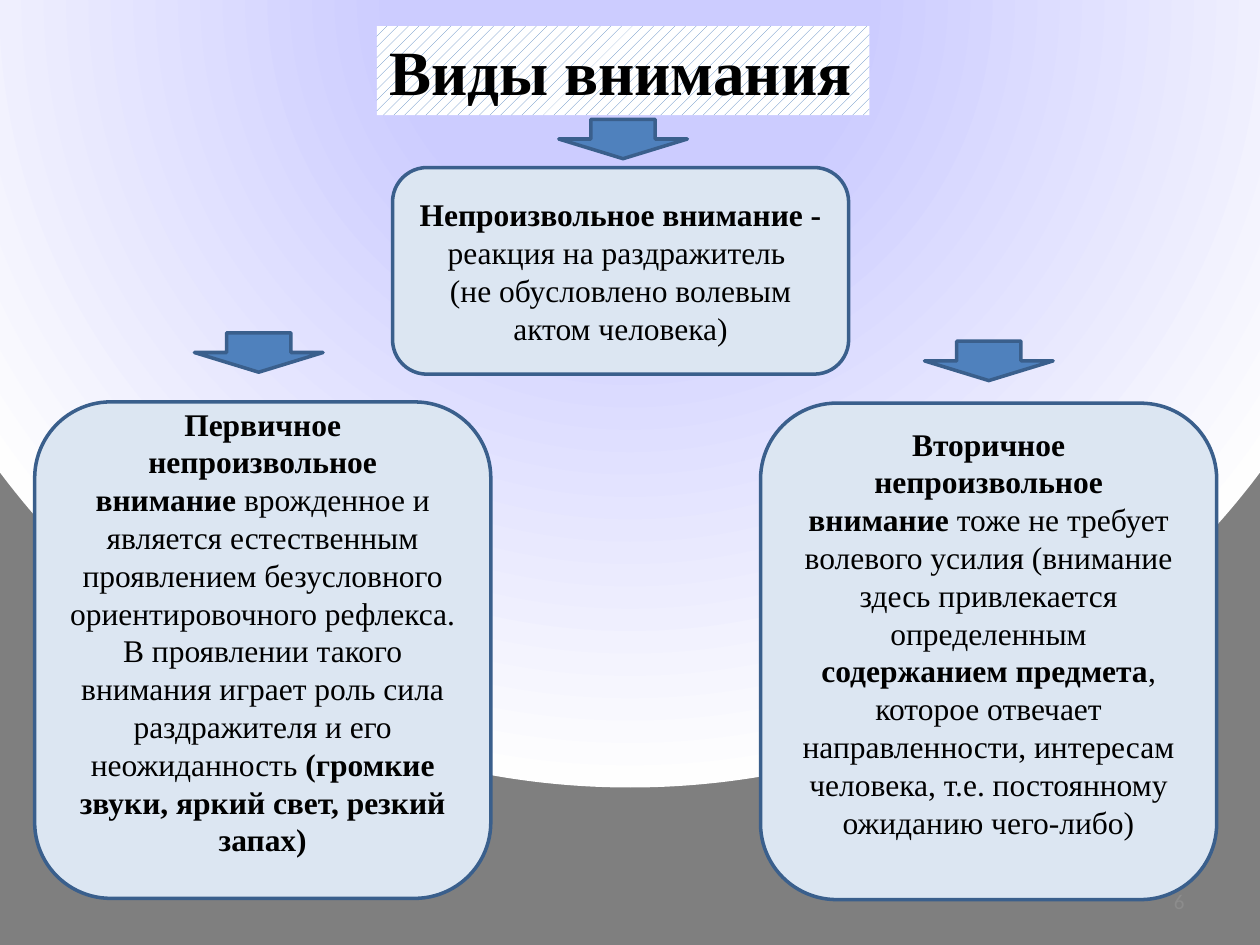
import lxml.etree
import pptx
import pptx.dml.color
import pptx.enum.dml
import pptx.enum.shapes
import pptx.enum.text
import pptx.util

Pt = pptx.util.Pt
RGBColor = pptx.dml.color.RGBColor
SHAPE = pptx.enum.shapes.MSO_SHAPE
ALIGN = pptx.enum.text.PP_ALIGN
ANCHOR = pptx.enum.text.MSO_ANCHOR

BLACK = RGBColor(0x00, 0x00, 0x00)
WHITE = RGBColor(0xFF, 0xFF, 0xFF)
GRAY = RGBColor(0x8C, 0x8C, 0x8C)
BLUE = RGBColor(0x4F, 0x81, 0xBD)
DARK_BLUE = RGBColor(0x3A, 0x5F, 0x8C)
PALE_BLUE = RGBColor(0xDC, 0xE6, 0xF2)

NO_BREAK_SPACE = chr(160)

BACKGROUND = """
<p:bg xmlns:p="http://schemas.openxmlformats.org/presentationml/2006/main"
      xmlns:a="http://schemas.openxmlformats.org/drawingml/2006/main">
  <p:bgPr>
    <a:gradFill rotWithShape="1">
      <a:gsLst>
        <a:gs pos="29000"><a:srgbClr val="CCCCFF"/></a:gs>
        <a:gs pos="100000"><a:srgbClr val="FEFEFE"/></a:gs>
        <a:gs pos="100000"><a:srgbClr val="7F7F7F"/></a:gs>
      </a:gsLst>
      <a:path path="circle">
        <a:fillToRect l="50000" t="-80000" r="50000" b="180000"/>
      </a:path>
    </a:gradFill>
    <a:effectLst/>
  </p:bgPr>
</p:bg>"""


def add_styled_shape(kind, left, top, width, height, fill):
    shape = slide.shapes.add_shape(kind, Pt(left), Pt(top), Pt(width), Pt(height))
    shape.shadow.inherit = False
    shape.fill.solid()
    shape.fill.fore_color.rgb = fill
    shape.line.color.rgb = DARK_BLUE
    shape.line.width = Pt(2)
    return shape


def write_text(shape, paragraphs, size=18, font="Times New Roman", color=BLACK,
               align=ALIGN.CENTER, anchor=ANCHOR.MIDDLE, wrap=True):
    """Fill the shape with paragraphs, each a list of (text, bold) spans."""
    frame = shape.text_frame
    frame.word_wrap = wrap
    frame.vertical_anchor = anchor
    for index, spans in enumerate(paragraphs):
        para = frame.paragraphs[0] if index == 0 else frame.add_paragraph()
        para.alignment = align
        for text, bold in spans:
            span = para.add_run()
            span.text = text
            span.font.size = Pt(size)
            span.font.name = font
            span.font.bold = bold
            span.font.color.rgb = color


deck = pptx.Presentation()
deck.slide_width, deck.slide_height = Pt(720), Pt(540)
slide = deck.slides.add_slide(deck.slide_layouts[6])
slide.element.cSld.insert(0, lxml.etree.fromstring(BACKGROUND))

# Attention kinds: left, top, height, bottom inset, paragraphs
boxes = [
    (434.6, 230.4, 283.68, 25, [
        [("Вторичное непроизвольное внимание" + NO_BREAK_SPACE, True),
         ("тоже не требует волевого усилия (внимание здесь привлекается определенным ", False),
         ("содержанием предмета", True),
         (", которое отвечает направленности, интересам человека, "
          "т.е. постоянному ожиданию чего-либо)", False)],
    ]),
    (224.3, 95.76, 118.08, 3.6, [
        [("Непроизвольное внимание - ", True), ("реакция на раздражитель ", False)],
        [("(не обусловлено волевым актом человека)", False)],
    ]),
    (19.8, 229.68, 283.68, 25, [
        [("Первичное непроизвольное внимание" + NO_BREAK_SPACE, True),
         ("врожденное и является естественным проявлением безусловного "
          "ориентировочного рефлекса. В проявлении такого внимания играет роль "
          "сила раздражителя и его неожиданность ", False),
         ("(громкие звуки, яркий свет, резкий запах)", True)],
    ]),
]
for left, top, height, bottom_inset, paragraphs in boxes:
    box = add_styled_shape(SHAPE.ROUNDED_RECTANGLE, left, top, 260.64, height, PALE_BLUE)
    box.text_frame.margin_bottom = Pt(bottom_inset)
    write_text(box, paragraphs)

page_number = slide.shapes.add_textbox(Pt(516), Pt(500.5), Pt(168), Pt(28.75))
write_text(page_number, [[("6", False)]], size=12, font="Calibri", color=GRAY,
           align=ALIGN.RIGHT)

title = slide.shapes.add_textbox(Pt(215.28), Pt(14.9), Pt(281.52), Pt(50.9))
title.fill.patterned()
title.fill.pattern = pptx.enum.dml.MSO_PATTERN.PERCENT_20
title.fill.fore_color.rgb = BLUE
title.fill.back_color.rgb = WHITE
write_text(title, [[("Виды внимания", True)]], size=36, align=ALIGN.LEFT,
           anchor=ANCHOR.TOP, wrap=False)
title.text_frame.auto_size = pptx.enum.text.MSO_AUTO_SIZE.SHAPE_TO_FIT_TEXT

for left, top in [(319.3, 68.2), (111.1, 190.2), (528.3, 195)]:
    add_styled_shape(SHAPE.DOWN_ARROW, left, top, 73.5, 22.5, BLUE)

deck.save("out.pptx")
